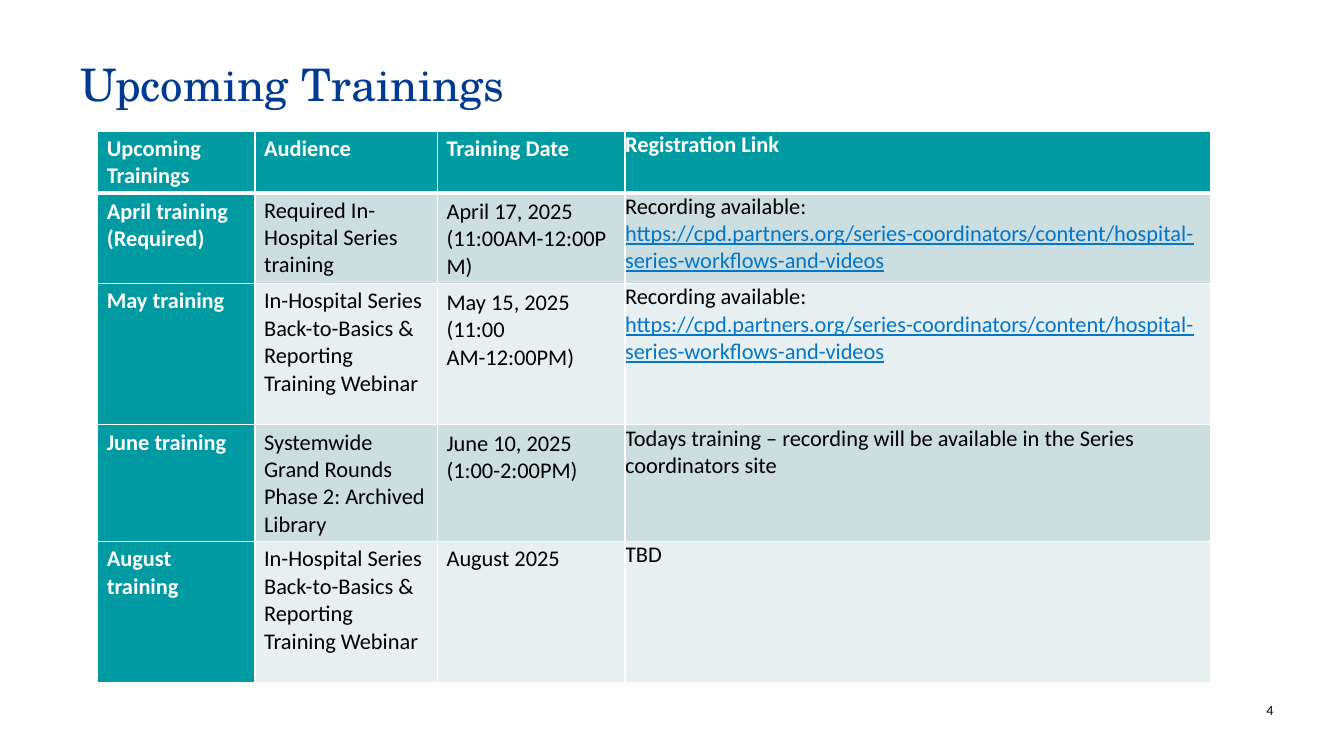
from lxml import etree
from pptx import Presentation
from pptx.dml.color import RGBColor
from pptx.enum.text import PP_ALIGN
from pptx.oxml.ns import qn
from pptx.util import Inches, Pt

LEFT, RIGHT = PP_ALIGN.LEFT, PP_ALIGN.RIGHT

TITLE = "Upcoming Trainings"
PAGE_NUMBER = "4"
RECORDING = "Recording available:\v"
RECORDING_URL = "https://cpd.partners.org/series-coordinators/content/hospital-series-workflows-and-videos"
WEBINAR = "In-Hospital Series\vBack-to-Basics & Reporting\vTraining Webinar"

TRAININGS = [
    (["Upcoming Trainings"], ["Audience"], ["Training Date"], ["Registration Link"]),
    (["April training", "(Required)"], ["Required In-Hospital Series training"],
     ["April 17, 2025", "(11:00AM-12:00PM)"], [RECORDING]),
    (["May training"], [WEBINAR], ["May 15, 2025", "(11:00 AM-12:00PM)"], [RECORDING]),
    (["June training"], ["Systemwide Grand Rounds Phase 2: Archived Library"],
     ["June 10, 2025", "(1:00-2:00PM)"],
     ["Todays training – recording will be available in the Series coordinators site"]),
    (["August training"], [WEBINAR], ["August 2025"], ["TBD"]),
]
COLUMN_WIDTHS = [1.56, 1.81, 1.86, 5.81]
ROW_HEIGHTS = [0.61, 0.9, 1.4, 1.16, 1.4]
LINK_COLUMN = 3

COLORS = {
    "title": "003A93", "heading": "009AA3", "odd_row": "CCDEE0", "even_row": "E7EFF0",
    "white": "FFFFFF", "text": "000000", "link": "0077CA",
}
BODY_FONT = "Calibri"
TITLE_FONT = "TeX Gyre Schola"


def color(name):
    return RGBColor.from_string(COLORS[name])


def style(font, face, size, color_name, bold=False):
    font.name = face
    font.size = Pt(size)
    font.color.rgb = color(color_name)
    font.bold = bold


def add_label(slide, box, text, face, size, color_name, align, margins):
    frame = slide.shapes.add_textbox(*map(Inches, box)).text_frame
    frame.word_wrap = True
    set_margins(frame, *margins)
    paragraph = frame.paragraphs[0]
    paragraph.text = text
    paragraph.alignment = align
    style(paragraph.font, face, size, color_name)
    return paragraph


def set_margins(holder, side, end):
    holder.margin_left = holder.margin_right = Inches(side)
    holder.margin_top = holder.margin_bottom = Inches(end)


def set_borders(cell, widths):
    properties = cell._tc.get_or_add_tcPr()
    for edge, width in widths.items():
        line = etree.SubElement(properties, qn(f"a:ln{edge}"), w=str(Pt(width)))
        fill = etree.SubElement(line, qn("a:solidFill"))
        etree.SubElement(fill, qn("a:srgbClr"), val=COLORS["white"])


def fill_cell(cell, lines, row, column):
    heading = row == 0 or column == 0
    margin = (0, 0) if column == LINK_COLUMN else (0.09, 0.04)
    set_margins(cell, *margin)
    set_borders(cell, {"L": 1, "R": 1, "T": 3 if row == 1 else 1, "B": 3 if row == 0 else 1})
    cell.fill.solid()
    cell.fill.fore_color.rgb = color(
        "heading" if heading else "odd_row" if row % 2 else "even_row")
    for index, line in enumerate(lines):
        frame = cell.text_frame
        paragraph = frame.add_paragraph() if index else frame.paragraphs[0]
        paragraph.text = line
        if index == 0 and len(lines) > 1:
            paragraph.line_spacing = 1.05
        style(paragraph.font, BODY_FONT, 16, "white" if heading else "text", heading)
        if line == RECORDING:
            link = paragraph.add_run()
            link.text = RECORDING_URL
            link.font.color.rgb = color("link")
            link.font.underline = True


def main():
    deck = Presentation()
    deck.slide_width, deck.slide_height = Inches(13.33), Inches(7.5)
    slide = deck.slides.add_slide(deck.slide_layouts[6])

    title = add_label(slide, (0.7, 0.57, 11.92, 1.05), TITLE,
                      TITLE_FONT, 32, "title", LEFT, (0.1, 0.05))
    title.line_spacing = 0.9

    table = slide.shapes.add_table(
        len(TRAININGS), len(COLUMN_WIDTHS), Inches(0.97), Inches(1.3),
        Inches(sum(COLUMN_WIDTHS)), Inches(sum(ROW_HEIGHTS))).table
    table.first_row = table.horz_banding = False
    for column, width in enumerate(COLUMN_WIDTHS):
        table.columns[column].width = Inches(width)
    for row, training in enumerate(TRAININGS):
        table.rows[row].height = Inches(ROW_HEIGHTS[row])
        for column, lines in enumerate(training):
            fill_cell(table.cell(row, column), lines, row, column)

    add_label(slide, (12.25, 6.96, 0.38, 0.17), PAGE_NUMBER,
              BODY_FONT, 10, "text", RIGHT, (0, 0))
    deck.save("out.pptx")


if __name__ == "__main__":
    main()
